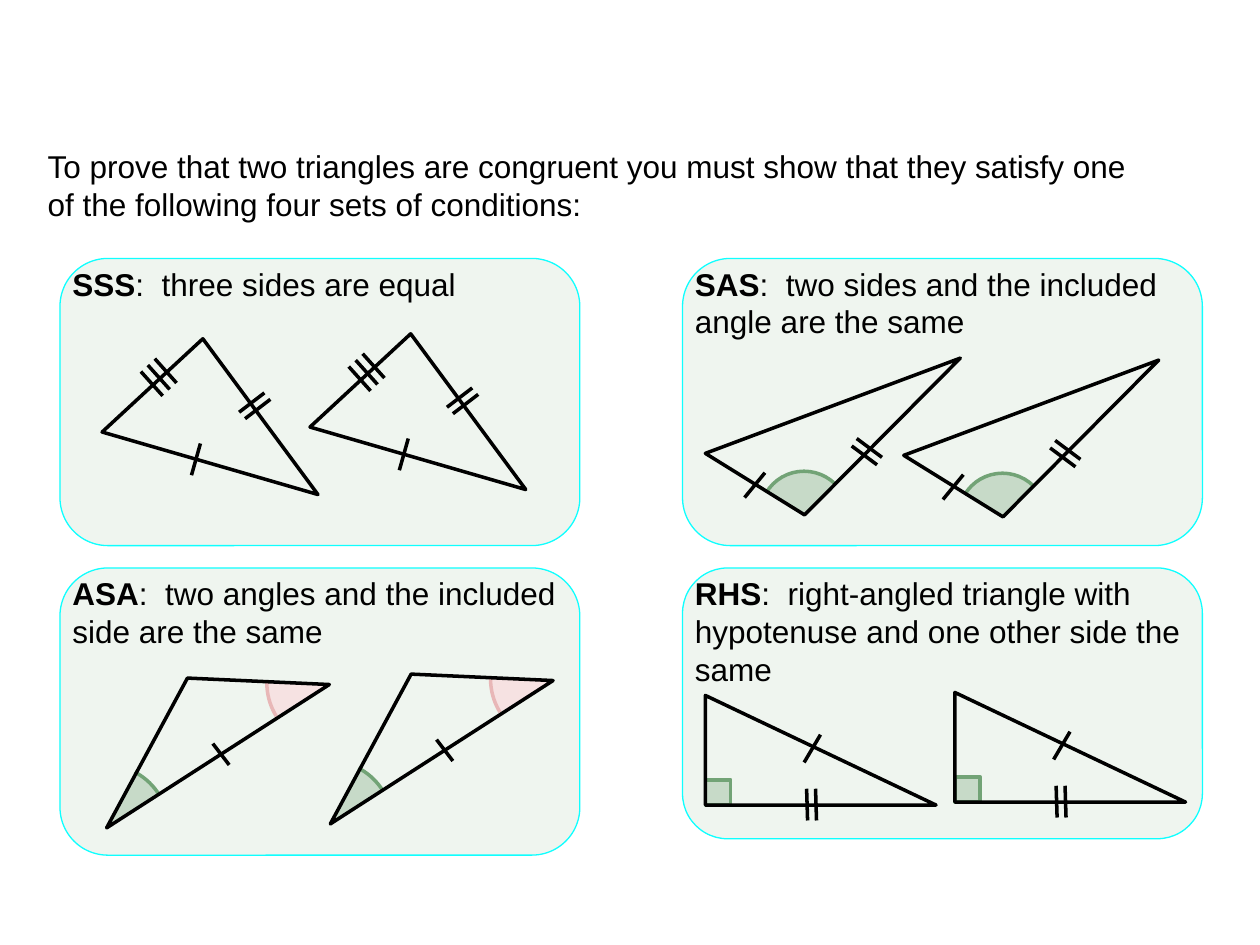
from lxml.etree import SubElement
from pptx import Presentation
from pptx.dml.color import RGBColor
from pptx.enum.shapes import MSO_CONNECTOR as Connector, MSO_SHAPE as Shape
from pptx.oxml.ns import qn
from pptx.util import Cm, Pt

INK, PANEL, PANEL_EDGE = "000000", "EFF5EF", "0FFFFF"
GREEN, PINK = ("C7DAC8", "72A376"), ("F6E2E2", "E8B7B7")


def color(value):
    return RGBColor.from_string(value)


def write(paragraph, text, size=18, font="Arial", fill=INK, bold=False):
    run = paragraph.add_run()
    run.text = text
    run.font.size = Pt(size)
    run.font.name = font
    run.font.bold = bold
    run.font.color.rgb = color(fill)


class CongruenceSlide:
    """Draws panels and marked triangles on one slide, measured in centimetres."""

    def __init__(self, slide, line_width=2):
        self.slide = slide
        self.shapes = slide.shapes
        self.line_width = line_width
        self.shift = (0, 0)

    def place(self, x, y):
        return Cm(x + self.shift[0]), Cm(y + self.shift[1])

    def paint(self, shape, fill=None, line=INK, weight=None):
        shape.shadow.inherit = False
        if fill:
            shape.fill.solid()
            shape.fill.fore_color.rgb = color(fill)
        else:
            shape.fill.background()
        shape.line.color.rgb = color(line)
        shape.line.width = Pt(weight or self.line_width)

    def preset(self, kind, left, top, width, height, **look):
        shape = self.shapes.add_shape(kind, *self.place(left, top), Cm(width), Cm(height))
        self.paint(shape, **look)
        return shape

    def text_box(self, left, top, width, height, wrap=True):
        box = self.shapes.add_textbox(*self.place(left, top), Cm(width), Cm(height))
        box.text_frame.word_wrap = wrap
        return box.text_frame

    def panel(self, left, top, height, name, rule):
        self.shift = (0, 0)
        self.shapes = self.slide.shapes.add_group_shape().shapes
        width = 10.48
        self.preset(Shape.ROUNDED_RECTANGLE, left, top, width, height,
                    fill=PANEL, line=PANEL_EDGE, weight=0.75)
        paragraph = self.text_box(left, top, width, 1.8).paragraphs[0]
        write(paragraph, name, bold=True)
        write(paragraph, f":  {rule}")

    def triangle(self, *corners):
        first, *others = [self.place(*corner) for corner in corners]
        builder = self.shapes.build_freeform(*first)
        builder.add_line_segments(others, close=True)
        self.paint(builder.convert_to_shape())

    def angle(self, center, radius, start, end, colors):
        x, y = center
        fill, line = colors
        arc = self.preset(Shape.ARC, x - radius, y - radius, 2 * radius, 2 * radius,
                          fill=fill, line=line)
        for index, degrees in enumerate((start, end)):
            arc.adjustments[index] = degrees * 0.6

    def ticks(self, start, end, count=1, step=(0, 0)):
        for number in range(count):
            ends = [self.place(x + number * step[0], y + number * step[1])
                    for x, y in (start, end)]
            line = self.shapes.add_connector(Connector.STRAIGHT, *ends[0], *ends[1])
            line.line.color.rgb = color(INK)
            line.line.width = Pt(self.line_width)
            SubElement(line._element.spPr, qn("a:effectLst"))

    def pair(self, draw, shift):
        for self.shift in ((0, 0), shift):
            draw(self)


def draw_sss(board):
    board.triangle((2.06, 8.71), (4.09, 6.83), (6.41, 9.97))
    board.ticks((4.04, 8.94), (3.86, 9.58))
    board.ticks((5.33, 7.92), (4.82, 8.31), 2, (0.12, 0.13))
    board.ticks((2.84, 7.49), (3.28, 7.98), 3, (0.14, -0.13))


def draw_sas(board):
    board.angle((16.21, 10.39), 0.89, 126.49 / 0.6, 188.38 / 0.6, GREEN)
    board.triangle((14.22, 9.14), (16.22, 10.38), (19.36, 7.22))
    board.ticks((15.42, 9.53), (15.01, 10.03))
    board.ticks((17.78, 9.22), (17.27, 8.84), 2, (-0.1, 0.15))


def draw_asa(board):
    board.angle((6.65, 13.77), 1.27, 88.9 / 0.6, 108.04 / 0.6, PINK)
    board.angle((2.13, 16.69), 1.27, 178.48 / 0.6, 196.87 / 0.6, GREEN)
    board.ticks((4.29, 14.99), (4.62, 15.42))
    board.triangle((2.15, 16.69), (6.64, 13.8), (3.78, 13.67))


def draw_rhs(board):
    fill, line = GREEN
    board.ticks((16.26, 15.9), (16.28, 16.54), 2, (0.18, 0))
    board.ticks((16.54, 14.81), (16.21, 15.37))
    board.preset(Shape.RECTANGLE, 14.22, 15.72, 0.51, 0.51, fill=fill, line=line)
    board.preset(Shape.RIGHT_TRIANGLE, 14.22, 14.02, 4.65, 2.21)


def main():
    presentation = Presentation()
    presentation.slide_width, presentation.slide_height = Cm(25.4), Cm(19.05)
    board = CongruenceSlide(presentation.slides.add_slide(presentation.slide_layouts[6]))

    intro = board.text_box(0.71, 2.84, 22.48, 1.8, wrap=False)
    write(intro.paragraphs[0],
          "To prove that two triangles are congruent you must show that they satisfy one")
    write(intro.add_paragraph(), "of the following four sets of conditions:")

    left, right, upper, lower = 1.21, 13.76, 5.21, 11.45
    conditions = (
        (left, lower, 5.79, "ASA", "two angles and the included side are the same",
         draw_asa, (4.51, -0.08)),
        (left, upper, 5.79, "SSS", "three sides are equal", draw_sss, (4.19, -0.1)),
        (right, upper, 5.79, "SAS", "two sides and the included angle are the same",
         draw_sas, (4, 0.04)),
        (right, lower, 5.46, "RHS",
         "right-angled triangle with hypotenuse and one other side the same",
         draw_rhs, (5.03, -0.06)),
    )
    for x, y, height, name, rule, draw, shift in conditions:
        board.panel(x, y, height, name, rule)
        board.pair(draw, shift)
    presentation.save("out.pptx")


if __name__ == "__main__":
    main()
